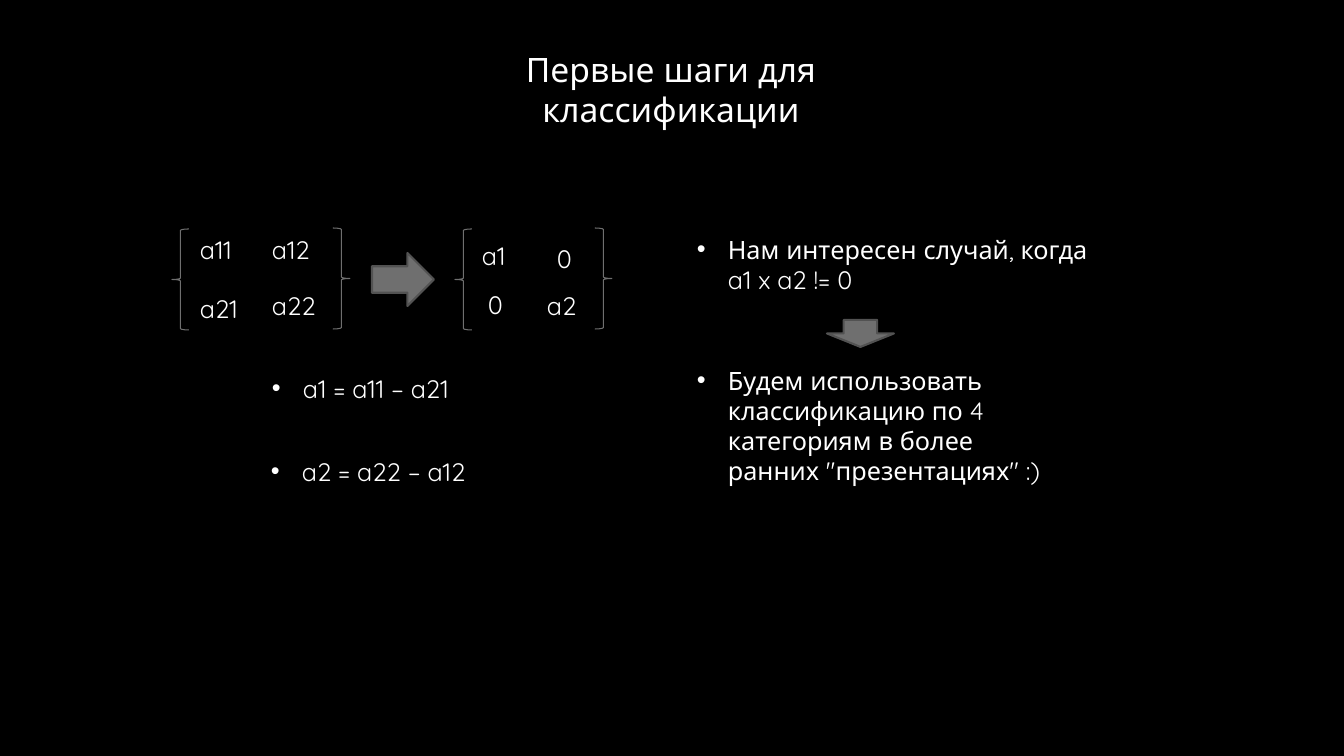
from pptx import Presentation
from pptx.dml.color import RGBColor
from pptx.enum.shapes import MSO_SHAPE
from pptx.enum.text import MSO_AUTO_SIZE, PP_ALIGN
from pptx.oxml.xmlchemy import OxmlElement
from pptx.util import Pt

PX = 914400 / 100.8
WHITE, GREY, DARK_GREY = "FFFFFF", "6F6F6F", "525252"


def color(value):
    return RGBColor.from_string(value)


def add_text(text, left, top, width, height, size=18, bullet=False):
    box = page.shapes.add_textbox(*(round(n * PX) for n in (left, top, width, height)))
    frame = box.text_frame
    frame.word_wrap = True
    frame.auto_size = MSO_AUTO_SIZE.SHAPE_TO_FIT_TEXT
    para = frame.paragraphs[0]
    span = para.add_run()
    span.text = text
    span.font.size = Pt(size)
    span.font.name = "Quicksand"
    span.font.color.rgb = color(WHITE)
    if bullet:
        indent = round(31 * PX)
        properties = para._p.get_or_add_pPr()
        properties.set("marL", str(indent))
        properties.set("indent", str(-indent))
        bullet_font = OxmlElement("a:buFont")
        bullet_font.set("typeface", "Arial")
        bullet_char = OxmlElement("a:buChar")
        bullet_char.set("char", "•")
        properties.extend([bullet_font, bullet_char])
    return para


deck = Presentation()
deck.slide_width = round(1344 * PX)
deck.slide_height = round(756 * PX)
page = deck.slides.add_slide(deck.slide_layouts[6])
page.background.fill.solid()
page.background.fill.fore_color.rgb = color("000000")

# Title
title = add_text("Первые шаги для классификации", 387, 44, 568, 122, size=24)
title.alignment = PP_ALIGN.CENTER

# Entries of the full and the diagonal matrix
entries = [
    ("a11", 190, 229), ("a12", 262, 229), ("a21", 190, 288), ("a22", 262, 285),
    ("a1", 472, 235), ("0", 547, 238), ("0", 478, 284), ("a2", 537, 285),
]
for text, left, top in entries:
    add_text(text, left, top, 76, 40)

# Braces around the matrices and arrows between the steps
outlines = [
    (MSO_SHAPE.LEFT_BRACE, 172, 229, 17, 101),
    (MSO_SHAPE.RIGHT_BRACE, 333, 228, 17, 101),
    (MSO_SHAPE.LEFT_BRACE, 455, 229, 17, 101),
    (MSO_SHAPE.RIGHT_BRACE, 595, 228, 17, 101),
    (MSO_SHAPE.RIGHT_ARROW, 372, 253, 62, 53),
    (MSO_SHAPE.DOWN_ARROW, 827, 320, 67, 27),
]
for kind, *place in outlines:
    shape = page.shapes.add_shape(kind, *(round(n * PX) for n in place))
    shape.shadow.inherit = False
    if kind in (MSO_SHAPE.RIGHT_ARROW, MSO_SHAPE.DOWN_ARROW):
        shape.fill.solid()
        shape.fill.fore_color.rgb = color(GREY)
        shape.line.color.rgb = color(DARK_GREY)
        shape.line.width = Pt(1.5)
    else:
        shape.fill.background()
        shape.line.color.rgb = color(GREY)
        shape.line.width = Pt(0.75)

# Formulas and conclusions
bullets = [
    ("a1 = a11 – a21", 262, 368, 302, 40),
    ("a2 = a22 – a12", 261, 451, 302, 40),
    ("Нам интересен случай, когда a1 x a2 != 0", 687, 229, 412, 71),
    ('Будем использовать классификацию по 4 категориям в более ранних "презентациях" :)',
     687, 360, 373, 132),
]
for text, *place in bullets:
    add_text(text, *place, bullet=True)

deck.save("out.pptx")
